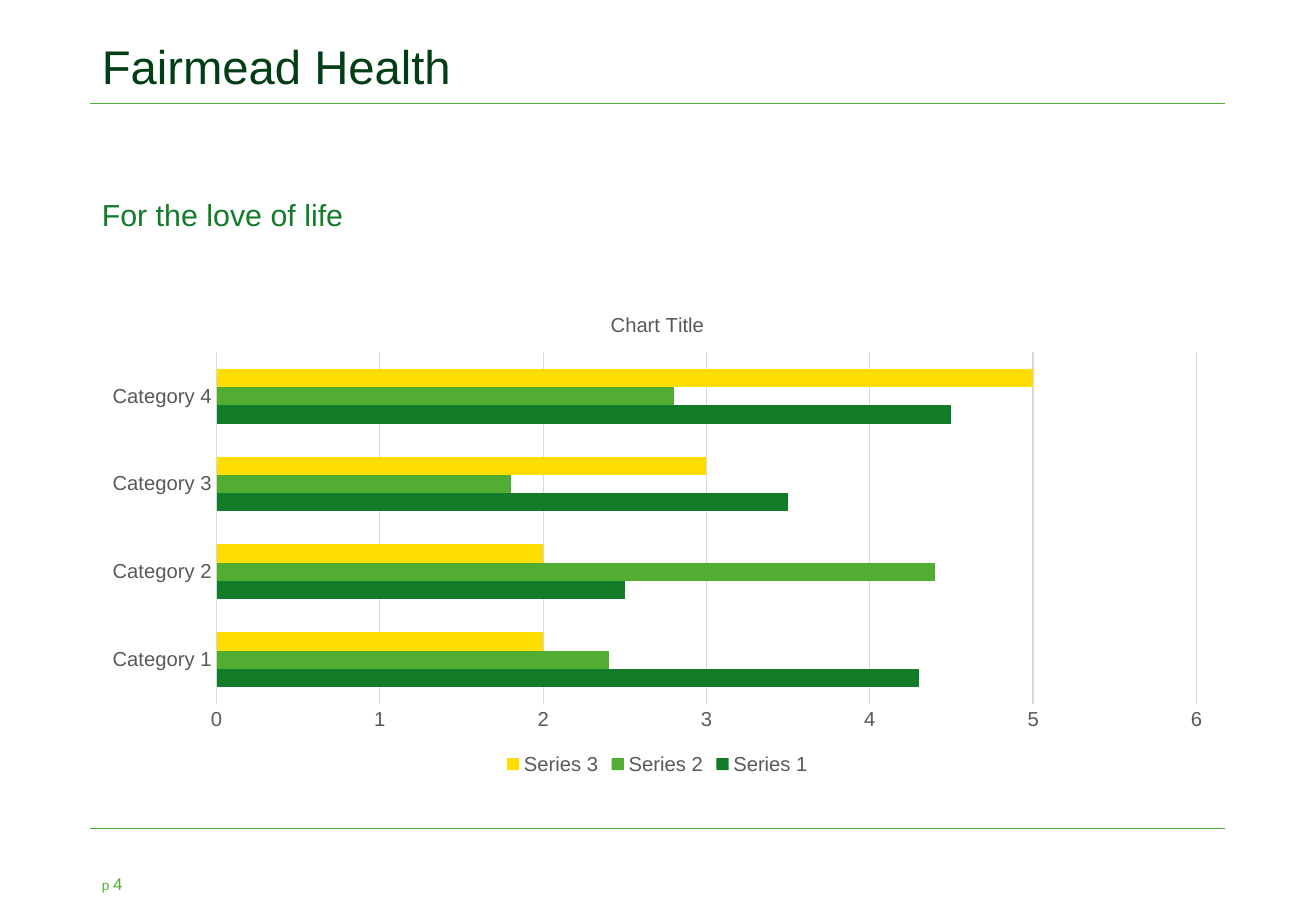
from dataclasses import dataclass

from lxml.etree import SubElement
from pptx import Presentation
from pptx.chart.data import CategoryChartData
from pptx.dml.color import RGBColor
from pptx.enum.chart import XL_CHART_TYPE, XL_LEGEND_POSITION, XL_TICK_MARK
from pptx.enum.shapes import MSO_CONNECTOR
from pptx.enum.text import MSO_ANCHOR
from pptx.oxml.ns import qn
from pptx.util import Inches, Pt


@dataclass(frozen=True)
class Theme:
    font: str = "Arial"
    dark: str = "003E15"
    green: str = "127C29"
    leaf: str = "52AE32"
    gold: str = "FFDD00"
    gray: str = "595959"
    grid: str = "D9D9D9"
    title: int = 28
    body: int = 18
    label: int = 12
    page: int = 10
    small: int = 8


def color(code):
    return RGBColor.from_string(code)


def style(font, name, size, code):
    font.name = name
    font.size = Pt(size)
    font.bold = False
    font.color.rgb = color(code)


def write(par, text, *, font, size, code):
    run = par.add_run()
    run.text = text
    style(run.font, font, size, code)


class Page:
    def __init__(self, deck, theme):
        self.theme = theme
        self.slide = deck.slides.add_slide(deck.slide_layouts[6])

    def rule(self, left, top, width):
        line = self.slide.shapes.add_connector(
            MSO_CONNECTOR.STRAIGHT, Inches(left), Inches(top),
            Inches(left + width), Inches(top))
        line.line.color.rgb = color(self.theme.leaf)
        line.line.width = Pt(0.5)
        SubElement(line._element.spPr, qn("a:effectLst"))

    def text(self, box, runs, code, spacing=1.0):
        frame = self.slide.shapes.add_textbox(*map(Inches, box)).text_frame
        frame.word_wrap = True
        frame.vertical_anchor = MSO_ANCHOR.MIDDLE
        par = frame.paragraphs[0]
        par.line_spacing = spacing
        for words, size in runs:
            write(par, words, font=self.theme.font, size=size, code=code)

    def bars(self, box, title, cats, series):
        look = self.theme
        label = (look.font, look.label, look.gray)
        data = CategoryChartData()
        data.categories = cats
        for name, vals, _ in series:
            data.add_series(name, vals)
        chart = self.slide.shapes.add_chart(
            XL_CHART_TYPE.BAR_CLUSTERED, *map(Inches, box), data).chart
        style(chart.font, *label)

        # Title and legend
        chart.has_title = True
        write(chart.chart_title.text_frame.paragraphs[0], title,
              font=look.font, size=look.label, code=look.gray)
        chart.chart_title.include_in_layout = False
        chart.has_legend = True
        chart.legend.position = XL_LEGEND_POSITION.BOTTOM
        chart.legend.include_in_layout = False
        style(chart.legend.font, *label)

        # Axes
        for axis in (chart.category_axis, chart.value_axis):
            axis.major_tick_mark = XL_TICK_MARK.NONE
            axis.minor_tick_mark = XL_TICK_MARK.NONE
            style(axis.tick_labels.font, *label)
        scale = chart.value_axis
        scale.minimum_scale, scale.maximum_scale, scale.major_unit = 0, 6, 1
        scale.format.line.fill.background()
        scale.has_major_gridlines = True
        for part in (chart.category_axis, scale.major_gridlines):
            part.format.line.color.rgb = color(look.grid)
            part.format.line.width = Pt(0.75)

        # Bars
        plot = chart.plots[0]
        plot.gap_width = 182
        plot.overlap = 0
        plot.vary_by_categories = False
        for bar, (_, _, code) in zip(plot.series, series):
            bar.format.fill.solid()
            bar.format.fill.fore_color.rgb = color(code)


def main():
    deck = Presentation()
    deck.slide_width, deck.slide_height = Inches(10.83), Inches(7.5)
    theme = Theme()
    page = Page(deck, theme)
    left, width = 0.74, 9.34

    # Frame lines
    for top in (6.82, 0.85):
        page.rule(left, top, width)

    # Chart
    page.bars((left, 2.41, width, 4.01), "Chart Title",
              [f"Category {n}" for n in range(1, 5)],
              [("Series 1", (4.3, 2.5, 3.5, 4.5), theme.green),
               ("Series 2", (2.4, 4.4, 1.8, 2.8), theme.leaf),
               ("Series 3", (2, 2, 3, 5), theme.gold)])

    # Headings and page number
    page.text((left, 0.3, width, 0.54), [("Fairmead Health", theme.title)],
              theme.dark, 0.9)
    page.text((left, 1.58, width, 0.4), [("For the love of life", theme.body)],
              theme.green, 0.9)
    page.text((left, 7.13, 0.57, 0.29),
              [("p ", theme.small), ("4", theme.page)], theme.leaf)

    deck.save("out.pptx")


if __name__ == "__main__":
    main()
